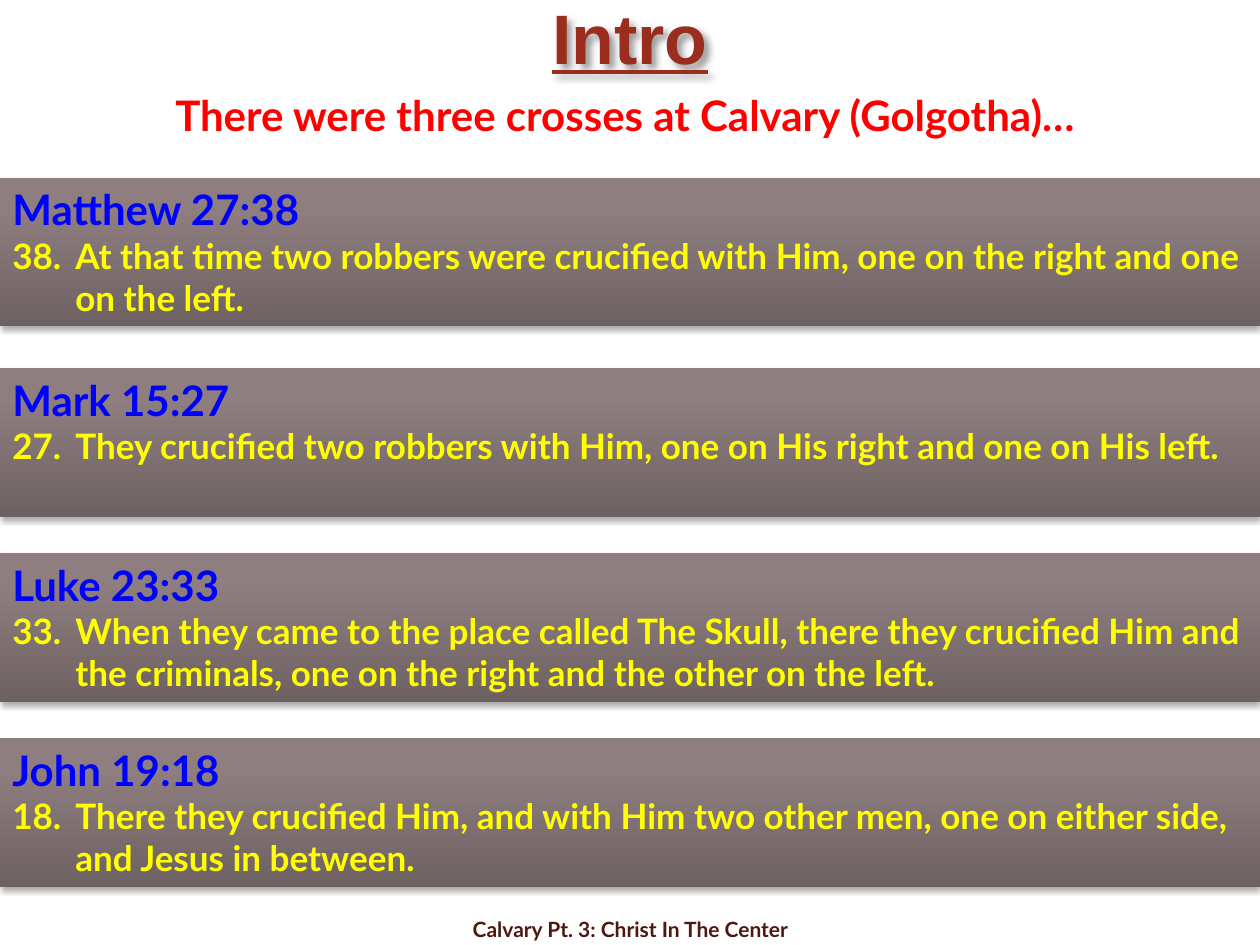
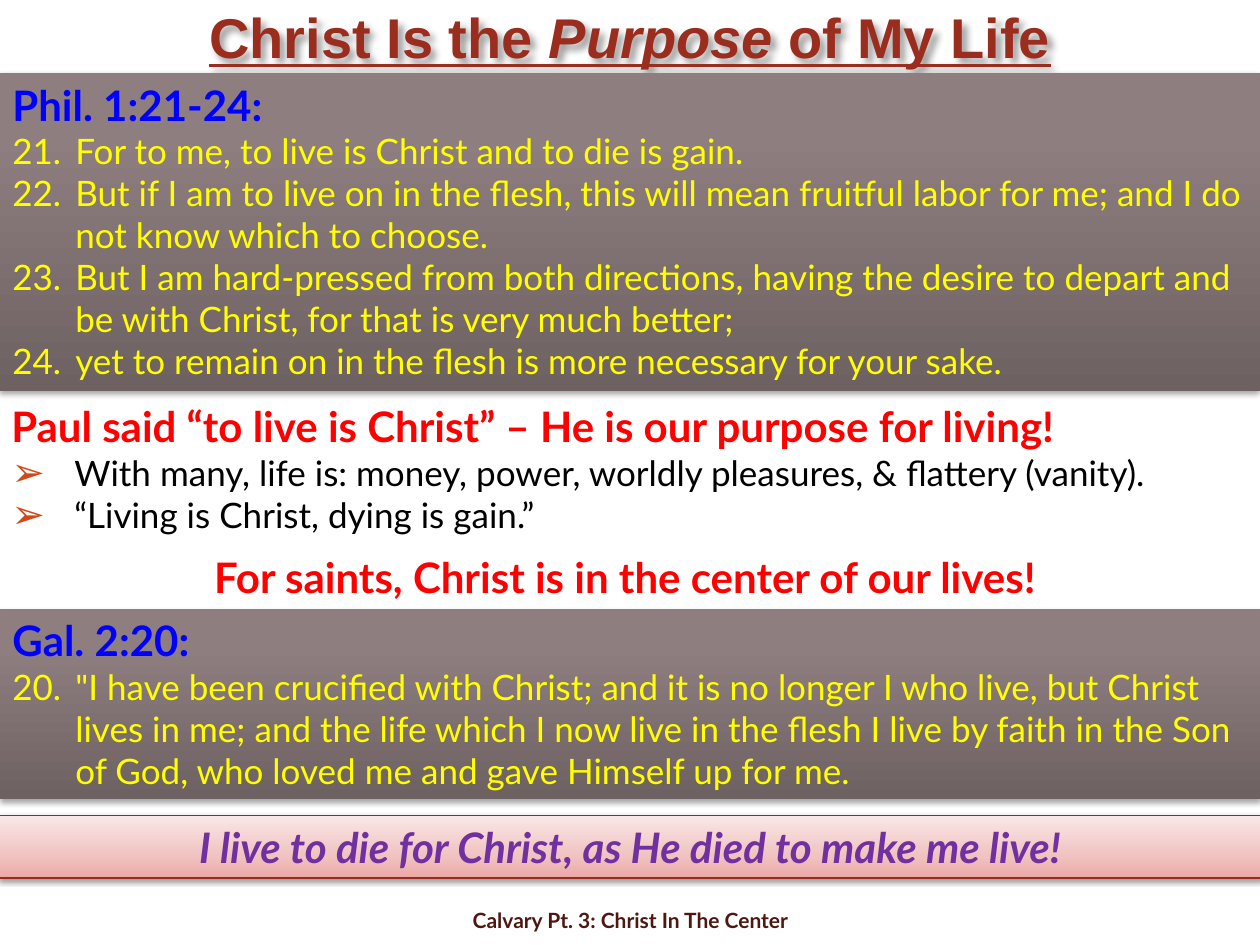
from lxml.etree import SubElement as Sub
from pptx import Presentation
from pptx.dml.color import RGBColor as RGB
from pptx.enum.shapes import MSO_SHAPE as Shape
from pptx.enum.text import MSO_ANCHOR as Anchor, MSO_AUTO_SIZE as Auto, PP_ALIGN as Align
from pptx.oxml.ns import qn
from pptx.util import Inches, Pt

COLS, ROWS = 100, 75
WIDE, HIGH = Inches(10), Inches(7.5)
HANG = Inches(0.5)
BODY = "Lato"
INK = {
    "title": "9B2D1F", "foot": "4E1710", "point": "FF0000", "ref": "0000FF",
    "verse": "FFFF00", "text": "000000", "close": "7030A0",
    "bullet": "D34817", "edge": "9B2A1B", "shade": "000000",
}
STONE = [(0, "6E6162"), (80, "8E7E7F"), (100, "8F7E80")]
ROSE = [(0, "ECA8A6"), (35, "F0C3C1"), (100, "FAE7E7")]

GOSPELS = [
    (14.1, "Matthew 27:38", "38.\tAt that time two robbers were crucified with Him, "
     "one on the right and one on the left."),
    (29.2, "Mark 15:27", "27.\tThey crucified two robbers with Him, "
     "one on His right and one on His left."),
    (43.9, "Luke 23:33", "33.\tWhen they came to the place called The Skull, there they "
     "crucified Him and the criminals, one on the right and the other on the left."),
    (58.6, "John 19:18", "18.\tThere they crucified Him, and with Him two other men, "
     "one on either side, and Jesus in between."),
]
PHIL = [
    "21.\tFor to me, to live is Christ and to die is gain.",
    "22.\tBut if I am to live on in the flesh, this will mean fruitful labor for me; "
    "and I do not know which to choose.",
    "23.\tBut I am hard-pressed from both directions, having the desire to depart "
    "and be with Christ, for that is very much better;",
    "24.\tyet to remain on in the flesh is more necessary for your sake.",
]
GAL = [
    "20.\t\"I have been crucified with Christ; and it is no longer I who live, but Christ "
    "lives in me; and the life which I now live in the flesh I live by faith in the Son "
    "of God, who loved me and gave Himself up for me.",
]
LIFE = [
    "With many, life is: money, power, worldly pleasures, & flattery (vanity).",
    "“Living is Christ, dying is gain.”",
]


def grid(col, row, cols, rows):
    """Turn grid cells into left, top, width and height."""
    return (int(WIDE * col / COLS), int(HIGH * row / ROWS),
            int(WIDE * cols / COLS), int(HIGH * rows / ROWS))


def place(shape, *cells):
    shape.left, shape.top, shape.width, shape.height = grid(*cells)


def write(frame, text, size=20, ink="text", font=BODY, bold=False, italic=False,
          line=False, align=Align.LEFT, hang=False, bullet=None):
    """Add a paragraph; parts between bars turn italic."""
    para = frame.paragraphs[0]
    if para.runs:
        para = frame.add_paragraph()
    props = para._p.get_or_add_pPr()
    props.set("marL", str(HANG if hang else 0))
    props.set("indent", str(-HANG if hang else 0))
    if bullet:
        Sub(Sub(props, qn("a:buClr")), qn("a:srgbClr"), val=INK["bullet"])
        Sub(props, qn("a:buSzPct"), val="115000")
        Sub(props, qn("a:buChar"), char=bullet)
    else:
        Sub(props, qn("a:buNone"))
    para.alignment = align
    para.space_before = Pt(0)
    for num, part in enumerate(text.split("|")):
        run = para.add_run()
        run.text = part
        face = run.font
        face.name, face.size = font, Pt(size)
        face.bold, face.underline = bold, line
        face.italic = italic or num % 2 == 1
        face.color.rgb = RGB.from_string(INK[ink])


def setup(frame, anchor=Anchor.TOP):
    frame.word_wrap = True
    frame.auto_size = Auto.NONE
    frame.vertical_anchor = anchor
    return frame


def shade(shape, alpha, blur, dist, angle):
    shape.shadow.inherit = False
    list_ = shape._element.spPr.find(qn("a:effectLst"))
    cast = Sub(list_, qn("a:outerShdw"), blurRad=str(Pt(blur)), dist=str(Pt(dist)),
               dir=str(angle * 60000), algn="ctr", rotWithShape="0")
    tint = Sub(cast, qn("a:srgbClr"), val=INK["shade"])
    Sub(tint, qn("a:alpha"), val=str(alpha * 1000))


def band(slide, cells, stops, alpha=35, dist=1.8, edge=None):
    """Draw a shaded bar whose colours run from bottom to top."""
    bar = slide.shapes.add_shape(Shape.RECTANGLE, *grid(*cells))
    blend = Sub(bar._element.spPr, qn("a:gradFill"), rotWithShape="1")
    row = Sub(blend, qn("a:gsLst"))
    for pos, tint in stops:
        Sub(Sub(row, qn("a:gs"), pos=str(pos * 1000)), qn("a:srgbClr"), val=tint)
    Sub(blend, qn("a:lin"), ang=str(270 * 60000), scaled="0")
    if edge:
        bar.line.color.rgb = RGB.from_string(INK[edge])
        bar.line.width = Pt(0.75)
    else:
        bar.line.fill.background()
    shade(bar, alpha, 3.1, dist, 90)
    return setup(bar.text_frame)


def box(slide, cells, text, anchor=Anchor.TOP, **form):
    """Add one centred line of text."""
    frame = setup(slide.shapes.add_textbox(*grid(*cells)).text_frame, anchor)
    write(frame, text, bold=True, align=Align.CENTER, **form)


def quote(slide, top, rows, ref, verses, bold=False):
    """Add a scripture bar: reference, then numbered verses."""
    frame = band(slide, (0, top, COLS, rows), STONE)
    write(frame, ref, size=24, ink="ref", bold=True, hang=True)
    for verse in verses:
        write(frame, verse, ink="verse", bold=bold, hang=True)


def start(deck, layout, title, size, foot):
    """Add a slide with its title and footer."""
    slide = deck.slides.add_slide(deck.slide_layouts[layout])
    head = slide.shapes.title
    place(head, 0, 0, COLS, 5.8)
    shade(head, 40, 4, 3, 45)
    write(setup(head.text_frame, Anchor.MIDDLE), title, size=size, ink="title",
          font="Arial", bold=True, line=True, align=Align.CENTER)
    box(slide, (34.2, foot, 31.7, ROWS - foot), "Calvary Pt. 3: Christ In The Center",
        anchor=Anchor.MIDDLE, size=12, ink="foot")
    return slide


def intro(deck):
    slide = start(deck, 5, "Intro", 40, 72.5)
    box(slide, (-0.4, 6.6, COLS, 5.1), "There were three crosses at Calvary (Golgotha)…",
        size=24, ink="point")
    for top, ref, verse in GOSPELS:
        quote(slide, top, 11.8, ref, [verse], bold=True)


def purpose(deck):
    slide = start(deck, 1, "Christ Is the |Purpose| of My Life", 32, 71)
    quote(slide, 5.8, 25.2, "Phil. 1:21-24:", PHIL)
    body = slide.placeholders[1]
    place(body, -0.1, 31.3, COLS, 11.8)
    frame = setup(body.text_frame)
    write(frame, "Paul said “to live is Christ” – He is our purpose for living!",
          size=24, ink="point", bold=True, hang=True)
    for item in LIFE:
        write(frame, item, hang=True, bullet="➢")
    box(slide, (-0.4, 43.3, COLS, 5), "For saints, Christ is in the center of our lives!",
        size=24, ink="point")
    quote(slide, 48.3, 15.1, "Gal. 2:20:", GAL)
    frame = band(slide, (-0.1, 64.7, 100.2, 5), ROSE, alpha=38, dist=1.6, edge="edge")
    write(frame, "I live to die for Christ, as He died to make me live!", size=24,
          ink="close", bold=True, italic=True, align=Align.CENTER)


def main():
    deck = Presentation()
    deck.slide_width, deck.slide_height = WIDE, HIGH
    intro(deck)
    purpose(deck)
    deck.save("out.pptx")


if __name__ == "__main__":
    main()
